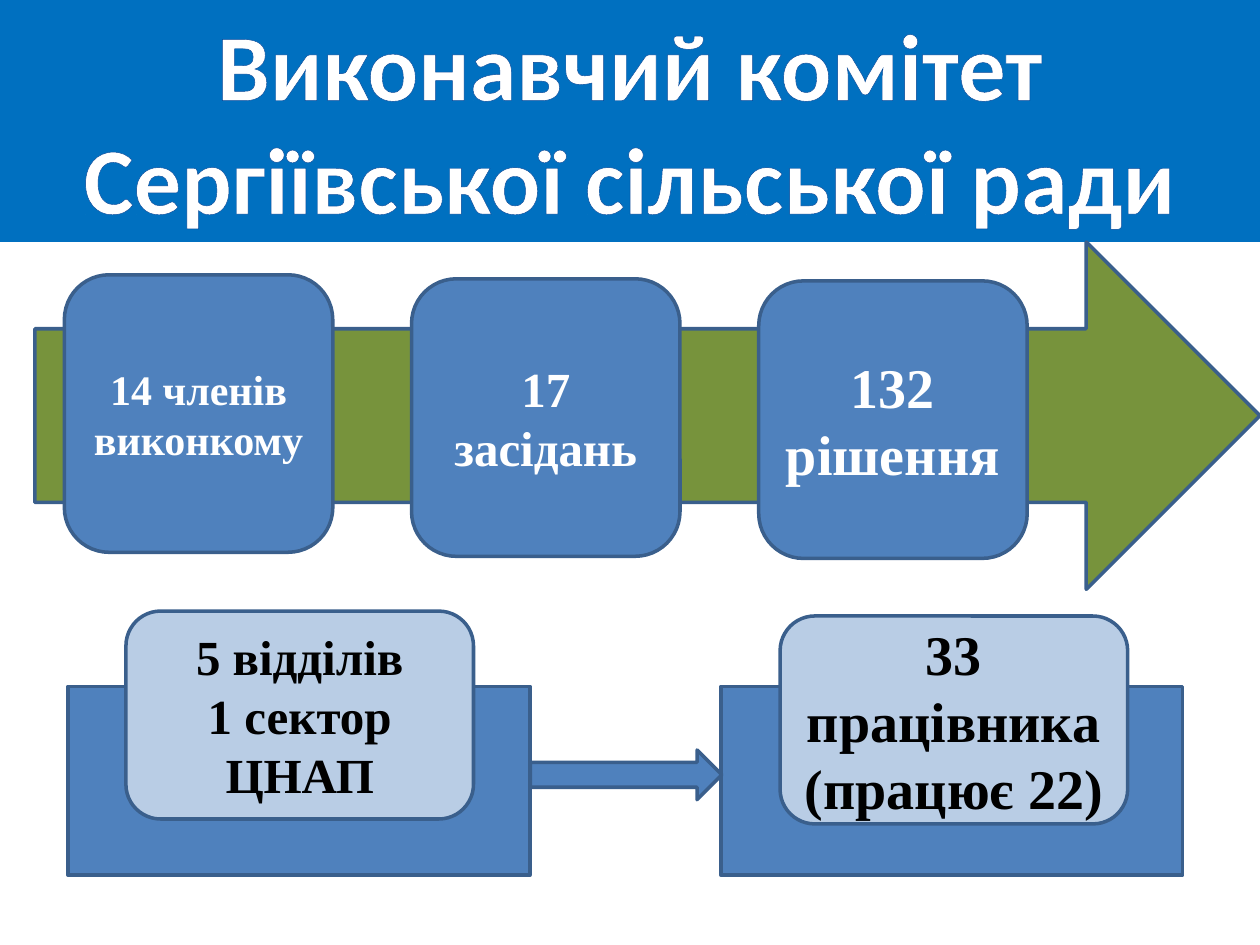
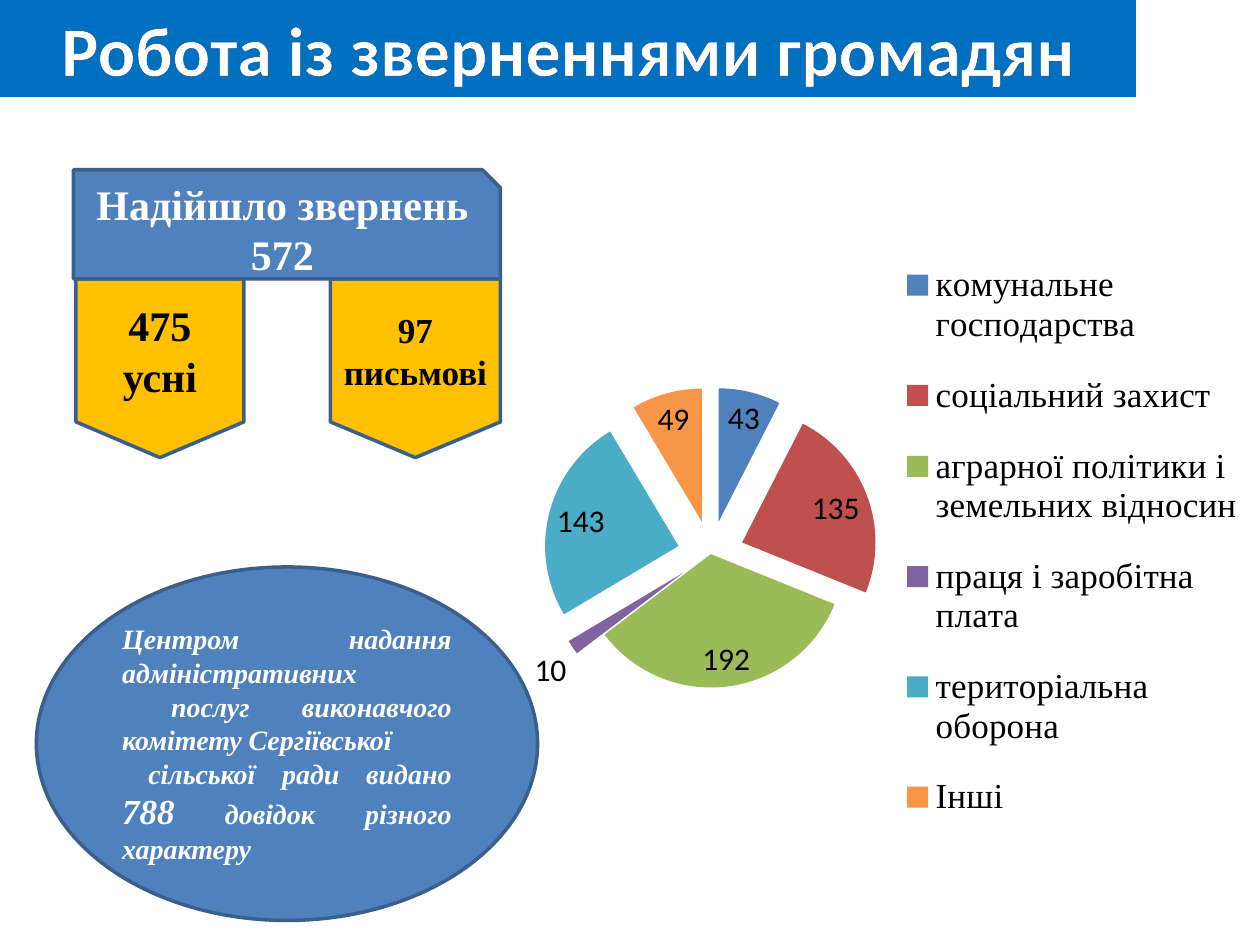
from lxml import etree
from pptx import Presentation
from pptx.chart import data
from pptx.dml.color import RGBColor
from pptx.enum import chart as kinds, shapes, text
from pptx.oxml import ns
from pptx.util import Pt

WHITE = RGBColor(0xFF, 0xFF, 0xFF)
BLACK = RGBColor(0x00, 0x00, 0x00)
BAND = RGBColor(0x00, 0x70, 0xC0)
EDGE = RGBColor(0x3A, 0x5F, 0x8C)
BLUE = RGBColor(0x4F, 0x81, 0xBD)
PALE = RGBColor(0xB9, 0xCD, 0xE5)
GREEN = RGBColor(0x77, 0x93, 0x3C)
GOLD = RGBColor(0xFF, 0xC0, 0x00)
SLICES = [BLUE, RGBColor(0xC0, 0x50, 0x4D), RGBColor(0x9B, 0xBB, 0x59),
          RGBColor(0x80, 0x64, 0xA2), RGBColor(0x4B, 0xAC, 0xC6),
          RGBColor(0xF7, 0x96, 0x46)]
SERIF, SANS = "Times New Roman", "Calibri"
FORM = shapes.MSO_SHAPE
ALIGN = text.PP_ALIGN


def style(font, size, color, face=SERIF, bold=True):
    font.size, font.name, font.bold = Pt(size), face, bold
    font.color.rgb = color


def add_run(para, words, size, color, face=SERIF):
    run = para.add_run()
    run.text = words
    style(run.font, size, color, face)
    return run


def add_form(slide, form, box, fill, edge=EDGE):
    item = slide.shapes.add_shape(form, *map(Pt, box))
    item.shadow.inherit = False
    item.fill.solid()
    item.fill.fore_color.rgb = fill
    if edge is None:
        item.line.fill.background()
    else:
        item.line.color.rgb = edge
        item.line.width = Pt(2)
    return item


def add_paras(item, count, align=ALIGN.CENTER):
    frame = item.text_frame
    frame.word_wrap = True
    frame.vertical_anchor = text.MSO_ANCHOR.MIDDLE
    paras = [frame.paragraphs[0]] + [frame.add_paragraph() for _ in range(count - 1)]
    for para in paras:
        para.alignment = align
    return paras


def add_card(slide, form, box, fill, lines, size, color=WHITE):
    item = add_form(slide, form, box, fill)
    for para, line in zip(add_paras(item, len(lines)), lines):
        add_run(para, line, size, color)


def add_title(slide, words, size, width, height):
    band = add_form(slide, FORM.RECTANGLE, (0, 0, width, height), BAND, None)
    run = add_run(add_paras(band, 1)[0], words, size, WHITE, SANS)
    band.text_frame.vertical_anchor = text.MSO_ANCHOR.TOP
    band.text_frame.auto_size = text.MSO_AUTO_SIZE.SHAPE_TO_FIT_TEXT
    # Thin dark outline around the letters
    line = etree.Element(ns.qn("a:ln"), w=str(Pt(1)))
    fill = etree.SubElement(line, ns.qn("a:solidFill"))
    etree.SubElement(fill, ns.qn("a:srgbClr"), val="054697")
    run.font._element.insert(0, line)


def add_note(slide, box, paras):
    item = add_form(slide, FORM.OVAL, box, BLUE)
    for para, (indent, runs) in zip(add_paras(item, len(paras), ALIGN.JUSTIFY), paras):
        if indent:
            para._p.get_or_add_pPr().set("indent", str(Pt(indent)))
        for words, size in runs:
            add_run(para, words, size, WHITE).font.italic = True


def make_layout(x, y, w, h, inner=False):
    layout = etree.Element(ns.qn("c:layout"))
    manual = etree.SubElement(layout, ns.qn("c:manualLayout"))
    pairs = [("layoutTarget", "inner")] if inner else []
    pairs += [("xMode", "edge"), ("yMode", "edge"),
              ("x", x), ("y", y), ("w", w), ("h", h)]
    for tag, val in pairs:
        etree.SubElement(manual, ns.qn("c:" + tag), val=str(val))
    return layout


def set_layout(parent, layout, after=None):
    for old in parent.findall(ns.qn("c:layout")):
        parent.remove(old)
    if after is None:
        parent.insert(0, layout)
    else:
        parent.find(ns.qn(after)).addnext(layout)


def explode(mark, amount):
    mark.addprevious(etree.Element(ns.qn("c:explosion"), val=str(amount)))


def add_pie(slide, box, topics):
    source = data.CategoryChartData()
    source.categories = [name for name, _ in topics]
    source.add_series("Series 1", [count for _, count in topics])
    chart = slide.shapes.add_chart(kinds.XL_CHART_TYPE.PIE, *map(Pt, box), source).chart
    style(chart.font, 18, BLACK, SANS, False)
    chart.has_title = False
    chart.has_legend = True
    legend = chart.legend
    legend.position = kinds.XL_LEGEND_POSITION.RIGHT
    legend.include_in_layout = False
    style(legend.font, 20, BLACK, SERIF, False)
    set_layout(legend._element, make_layout(0.52, 0.03, 0.47, 0.94), "c:legendPos")

    plot = chart.plots[0]
    plot.vary_by_categories = True
    series = plot.series[0]
    for index, color in enumerate(SLICES):
        fill = series.points[index].format.fill
        fill.solid()
        fill.fore_color.rgb = color
    labels = series.data_labels
    labels.show_value = True
    labels.position = kinds.XL_LABEL_POSITION.BEST_FIT
    style(labels.font, 18, BLACK, SANS, False)

    # All slices are pulled out except the largest one
    slices = series._element.findall(ns.qn("c:dPt"))
    largest = max(range(len(topics)), key=lambda i: topics[i][1])
    explode(slices[0], 25)
    explode(slices[largest].find(ns.qn("c:spPr")), 0)
    area = chart._chartSpace.find(".//" + ns.qn("c:plotArea"))
    set_layout(area, make_layout(0.05, 0.265, 0.45, 0.51, True))


def build_board(slide):
    add_title(slide, "Виконавчий комітет Сергіївської сільської ради", 54, 720, 138.24)

    # Facts along the large arrow
    add_form(slide, FORM.RIGHT_ARROW, (20, 138.24, 700, 198.5), GREEN)
    facts = [("14 членів виконкому", 24, 157), ("17 засідань", 28, 159.3),
             ("132 рішення", 32, 160.5)]
    for index, (words, size, top) in enumerate(facts):
        box = (36.8 + 198.4 * index, top, 153.4, 158.6)
        add_card(slide, FORM.ROUNDED_RECTANGLE, box, BLUE, [words], size)

    # Staff: a pale card on each blue block
    staff = [(39, 72, 349.2, ["5 відділів", "1 сектор", "ЦНАП"], 28),
             (412, 445.8, 352, ["33 працівника (працює 22)"], 32)]
    for left, card, top, lines, size in staff:
        add_form(slide, FORM.RECTANGLE, (left, 392.2, 263.8, 108), BLUE)
        add_card(slide, FORM.ROUNDED_RECTANGLE, (card, top, 198.6, 118.8),
                 PALE, lines, size, BLACK)
    add_form(slide, FORM.RIGHT_ARROW, (303, 428.6, 109.5, 28.4), BLUE)


def build_appeals(slide):
    add_title(slide, "Робота із зверненнями громадян", 40, 649.2, 55.44)

    # Total and its two parts
    for left, width, words, size in [(43.4, 96, "475 усні", 24),
                                     (188.8, 97.2, "97 письмові", 20)]:
        add_card(slide, FORM.FLOWCHART_OFFPAGE_CONNECTOR, (left, 159.3, width, 102.2),
                 GOLD, [words], size, BLACK)
    add_card(slide, FORM.SNIP_1_RECTANGLE, (42, 97, 244, 62.4), BLUE,
             ["Надійшло звернень 572"], 24)

    # Appeals by topic
    add_pie(slide, (288, 122.4, 430, 373.7), [
        ("комунальне господарства", 43), ("соціальний захист", 135),
        ("аграрної політики і земельних відносин", 192),
        ("праця і заробітна плата", 10), ("територіальна оборона", 143),
        ("Інші", 49)])

    # Service centre
    add_note(slide, (20.8, 324, 286.4, 202), [
        (0, [("Центром надання адміністративних", 16)]),
        (28, [("послуг виконавчого комітету Сергіївської", 16)]),
        (15, [("сільської ради видано ", 16), ("788", 20),
              (" довідок різного характеру", 16)])])


def main():
    deck = Presentation()
    deck.slide_width, deck.slide_height = Pt(720), Pt(540)
    for build in (build_board, build_appeals):
        build(deck.slides.add_slide(deck.slide_layouts[6]))
    deck.save("out.pptx")


if __name__ == "__main__":
    main()
